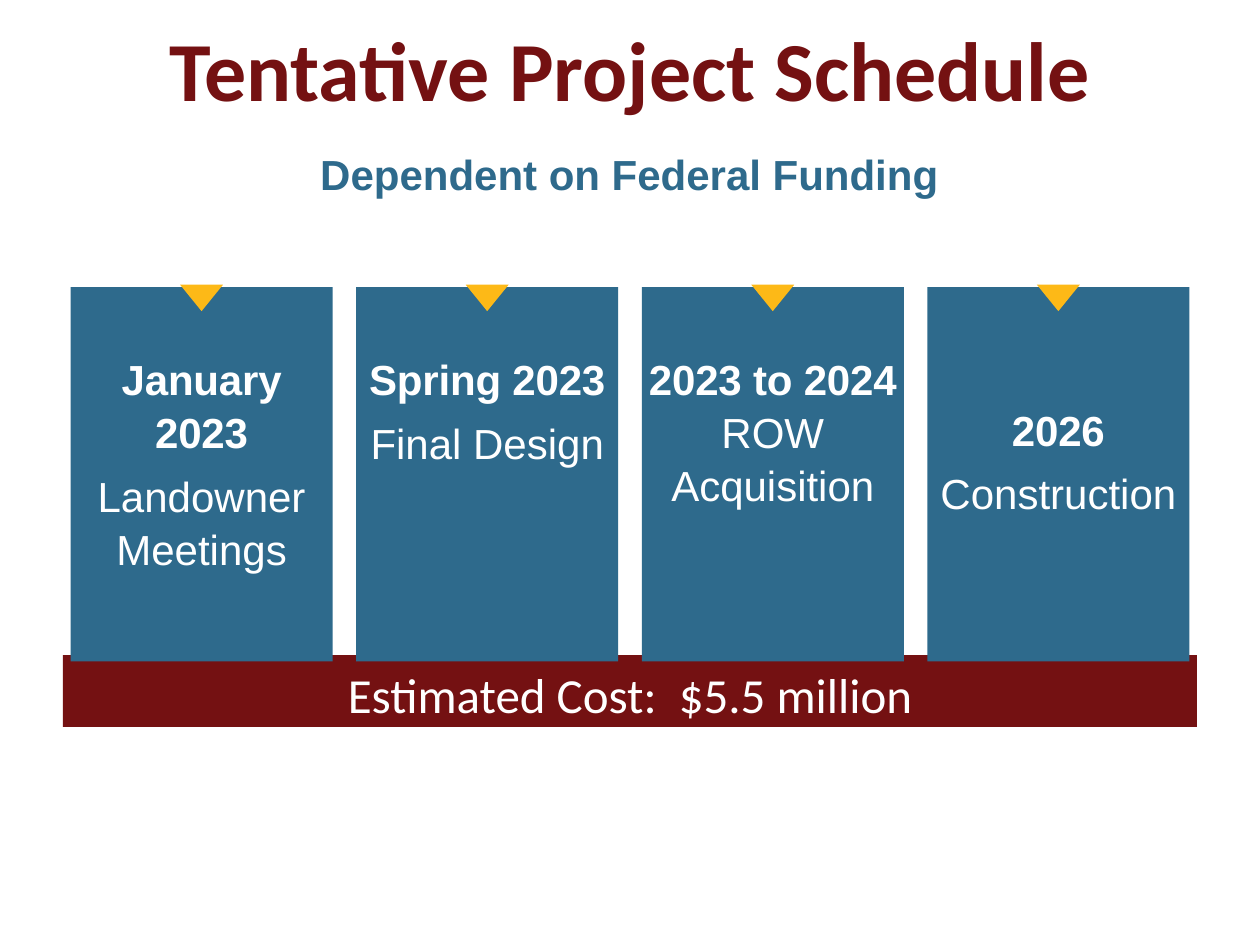
from dataclasses import dataclass

from pptx import Presentation
from pptx.dml.color import RGBColor
from pptx.enum.shapes import MSO_SHAPE
from pptx.enum.text import MSO_ANCHOR, PP_ALIGN
from pptx.util import Inches, Pt

RECT = MSO_SHAPE.RECTANGLE
MARK = MSO_SHAPE.FLOWCHART_MERGE
TOP, MIDDLE = MSO_ANCHOR.TOP, MSO_ANCHOR.MIDDLE
CENTER = PP_ALIGN.CENTER

COLORS = {"maroon": "741112", "blue": "2E6A8C", "gold": "FDB917", "white": "FFFFFF"}

LEFT, CARD_TOP = 0.56, 2.28
CARD_W, CARD_H = 2.08, 2.97
PITCH = (7.36 - LEFT) / 3
MARK_W, MARK_H = 0.34, 0.21


@dataclass
class Phase:
    date: str
    task: str
    top: float = 2.78
    gap: int = 6


@dataclass
class Style:
    size: int
    color: str
    font: str = "Arial"
    bold: bool = False
    track: int = 0


PHASES = [
    Phase("January 2023", "Landowner Meetings"),
    Phase("Spring 2023", "Final Design"),
    Phase("2023 to 2024", "ROW Acquisition", gap=0),
    Phase("2026", "Construction", top=3.18),
]
DATE = Style(24, "white", bold=True, track=-10)
TASK = Style(24, "white")


def rgb(name: str) -> RGBColor:
    return RGBColor.from_string(COLORS[name])


def add_block(slide, kind, x: float, y: float, w: float, h: float, color: str):
    block = slide.shapes.add_shape(kind, Inches(x), Inches(y), Inches(w), Inches(h))
    block.shadow.inherit = False
    block.fill.solid()
    block.fill.fore_color.rgb = rgb(color)
    block.line.fill.background()
    return block


def add_box(slide, x: float, y: float, w: float, h: float):
    return slide.shapes.add_textbox(Inches(x), Inches(y), Inches(w), Inches(h))


def write(shape, lines: list[tuple[str, Style]], anchor=TOP, wrap: bool = True) -> None:
    """Fill a shape with centred paragraphs, one for each text and style."""
    frame = shape.text_frame
    frame.word_wrap = wrap
    frame.vertical_anchor = anchor
    frame.text = "\n".join(text for text, _ in lines)
    for para, (_, style) in zip(frame.paragraphs, lines):
        para.alignment = CENTER
        para.line_spacing = 1.05
        for run in para.runs:
            run.font.name = style.font
            run.font.size = Pt(style.size)
            run.font.bold = style.bold
            run.font.color.rgb = rgb(style.color)
            if style.track:
                run.font._element.set("spc", str(style.track))


def add_card(slide, x: float) -> None:
    add_block(slide, RECT, x, CARD_TOP, CARD_W, CARD_H, "blue")
    mid = x + (CARD_W - MARK_W) / 2
    add_block(slide, MARK, mid, CARD_TOP - 0.02, MARK_W, MARK_H, "gold")


def add_phase(slide, x: float, phase: Phase) -> None:
    box = add_box(slide, x, phase.top, CARD_W, 1.7)
    frame = box.text_frame
    frame.margin_left = frame.margin_right = frame.margin_bottom = 0
    frame.margin_top = Inches(0.01)
    write(box, [(phase.date, DATE), (phase.task, TASK)])
    frame.paragraphs[0].space_after = Pt(phase.gap)


def main() -> None:
    deck = Presentation()
    deck.slide_width, deck.slide_height = Inches(10), Inches(7.5)
    slide = deck.slides.add_slide(deck.slide_layouts[6])

    bar = add_block(slide, RECT, 0.5, 5.2, 9, 0.57, "maroon")
    write(bar, [("Estimated Cost:  $5.5 million", Style(28, "white", "Calibri"))])

    title = add_box(slide, 0, 0.02, 10, 1)
    head = Style(48, "maroon", "Calibri", bold=True)
    write(title, [("Tentative Project Schedule", head)], MIDDLE)

    note = add_box(slide, 2.42, 1.12, 5.15, 0.5)
    sub = Style(24, "blue", bold=True)
    write(note, [("Dependent on Federal Funding", sub)], MIDDLE, wrap=False)

    for i, phase in enumerate(PHASES):
        x = LEFT + i * PITCH
        add_card(slide, x)
        add_phase(slide, x, phase)

    deck.save("out.pptx")


if __name__ == "__main__":
    main()
